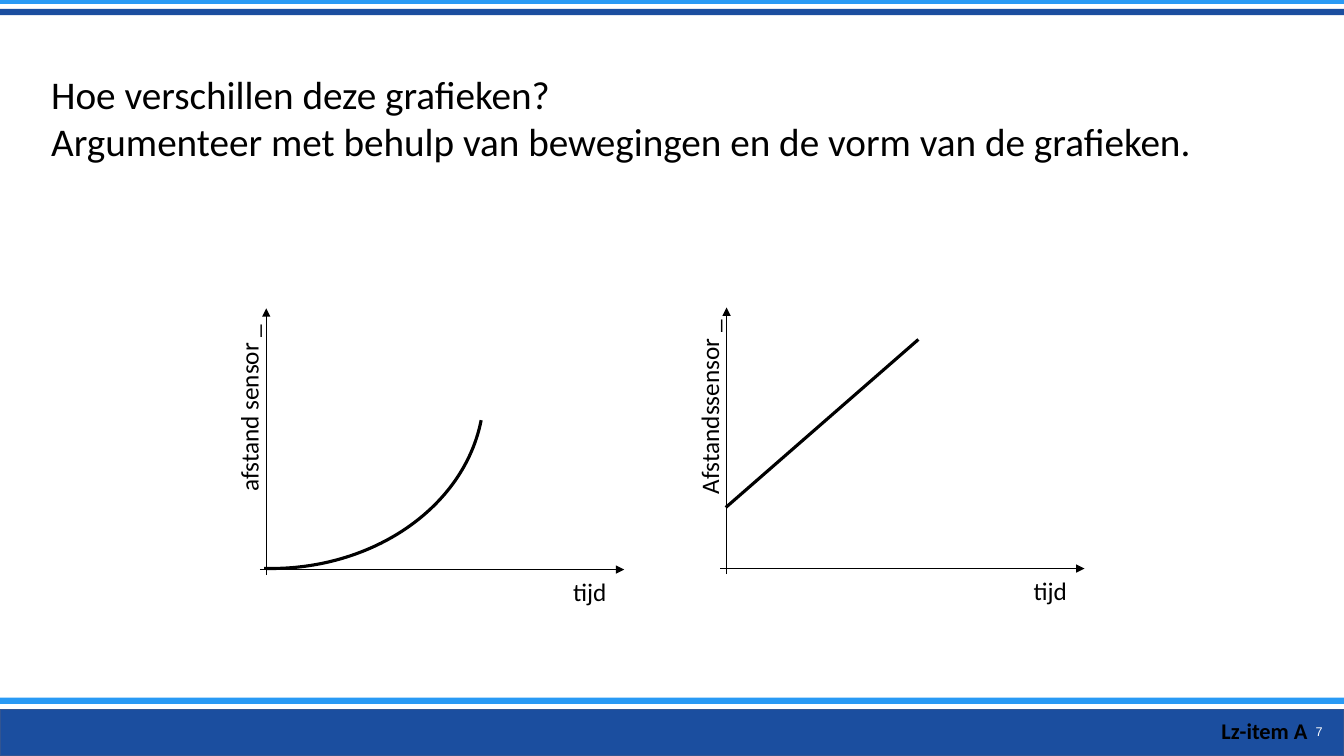
"""Build a slide that compares two distance-time graphs."""
from lxml import etree
from pptx import Presentation
from pptx import util as u
from pptx.dml import color
from pptx.enum import shapes, text
from pptx.oxml import ns

BLACK = color.RGBColor(0x00, 0x00, 0x00)
WHITE = color.RGBColor(0xFF, 0xFF, 0xFF)
NAVY = color.RGBColor(0x1B, 0x4E, 0x9F)
SKY = color.RGBColor(0x29, 0x9A, 0xF5)
EDGE = color.RGBColor(0x32, 0x54, 0x91)
WIDTH, HEIGHT = 960, 540


class Sketch:
    def __init__(self, page, font="Calibri"):
        self.page = page
        self.font = font

    def bar(self, top, height, fill, edge=None):
        bar = self.page.shapes.add_shape(
            shapes.MSO_SHAPE.RECTANGLE, 0, u.Pt(top), u.Pt(WIDTH), u.Pt(height))
        bar.shadow.inherit = False
        bar.fill.solid()
        bar.fill.fore_color.rgb = fill
        if edge is None:
            bar.line.fill.background()
        else:
            bar.line.color.rgb = edge
            bar.line.width = u.Pt(1)

    def textbox(self, lines, left, top, width, height, size, ink=BLACK, bold=False,
                align=text.PP_ALIGN.LEFT, font=None):
        box = self.page.shapes.add_textbox(*map(u.Pt, (left, top, width, height)))
        frame = box.text_frame
        frame.word_wrap = True
        frame.vertical_anchor = text.MSO_ANCHOR.MIDDLE
        for index, line in enumerate(lines):
            para = frame.add_paragraph() if index else frame.paragraphs[0]
            para.alignment = align
            span = para.add_run()
            span.text = line
            span.font.name = font or self.font
            span.font.size = u.Pt(size)
            span.font.bold = bold
            span.font.color.rgb = ink
        return box

    def label(self, words, left, top, width, height, turn=0):
        box = self.textbox([words], left, top, width, height, 18,
                           align=text.PP_ALIGN.CENTER)
        box.rotation = turn
        frame = box.text_frame
        frame.margin_left = frame.margin_right = 0
        frame.margin_top = frame.margin_bottom = 0
        frame.paragraphs[0].line_spacing = 1.07

    def line(self, x1, y1, x2, y2, weight, arrow=False):
        line = self.page.shapes.add_connector(
            shapes.MSO_CONNECTOR.STRAIGHT, *map(u.Pt, (x1, y1, x2, y2)))
        line.line.color.rgb = BLACK
        line.line.width = u.Pt(weight)
        properties = line.element.spPr
        if arrow:
            etree.SubElement(properties.find(ns.qn("a:ln")), ns.qn("a:tailEnd"),
                             type="triangle")
        etree.SubElement(properties, ns.qn("a:effectLst"))

    def arc(self, left, top, width, height, start, end, turn, weight):
        arc = self.page.shapes.add_shape(
            shapes.MSO_SHAPE.ARC, *map(u.Pt, (left, top, width, height)))
        arc.adjustments[0] = start
        arc.adjustments[1] = end
        arc.rotation = turn
        arc.shadow.inherit = False
        arc.fill.background()
        arc.line.color.rgb = BLACK
        arc.line.width = u.Pt(weight)

    def axes(self, x, y, caption):
        self.line(x, y + 4, x, y - 186.5, 0.25, arrow=True)
        self.label(caption, x - 103, y - 138.3, 179.3, 46.1, turn=270)
        self.line(x - 4.5, y, x + 255.7, y, 0.25, arrow=True)
        self.label("tijd", x + 211, y + 4.3, 40.3, 20.9)


def main():
    deck = Presentation()
    deck.slide_width = u.Pt(WIDTH)
    deck.slide_height = u.Pt(HEIGHT)
    sketch = Sketch(deck.slides.add_slide(deck.slide_layouts[6]))

    sketch.bar(506.8, 33.2, NAVY, EDGE)
    sketch.bar(0, 2.8, SKY)
    sketch.bar(6.4, 4.4, NAVY)
    sketch.bar(498.4, 4.4, SKY)

    sketch.textbox(["7"], 913, 508.3, 38.9, 28.8, 9, WHITE,
                   align=text.PP_ALIGN.RIGHT, font="Arial")
    sketch.textbox(["Hoe verschillen deze grafieken?",
                    "Argumenteer met behulp van bewegingen en de vorm van de grafieken."],
                   29.5, 46.1, 900.7, 74.9, 28)

    sketch.axes(190.2, 406.8, "afstand sensor _")
    sketch.axes(519, 406.1, "Afstandssensor _")
    sketch.arc(67.7, 128.2, 252, 303.8, 166.576, 1.401, 90, 2.25)
    sketch.line(518.4, 362.5, 656, 242.5, 2.25)

    sketch.textbox(["Lz-item A"], 865.4, 508.3, 94, 26.6, 16, bold=True)
    deck.save("out.pptx")


if __name__ == "__main__":
    main()
